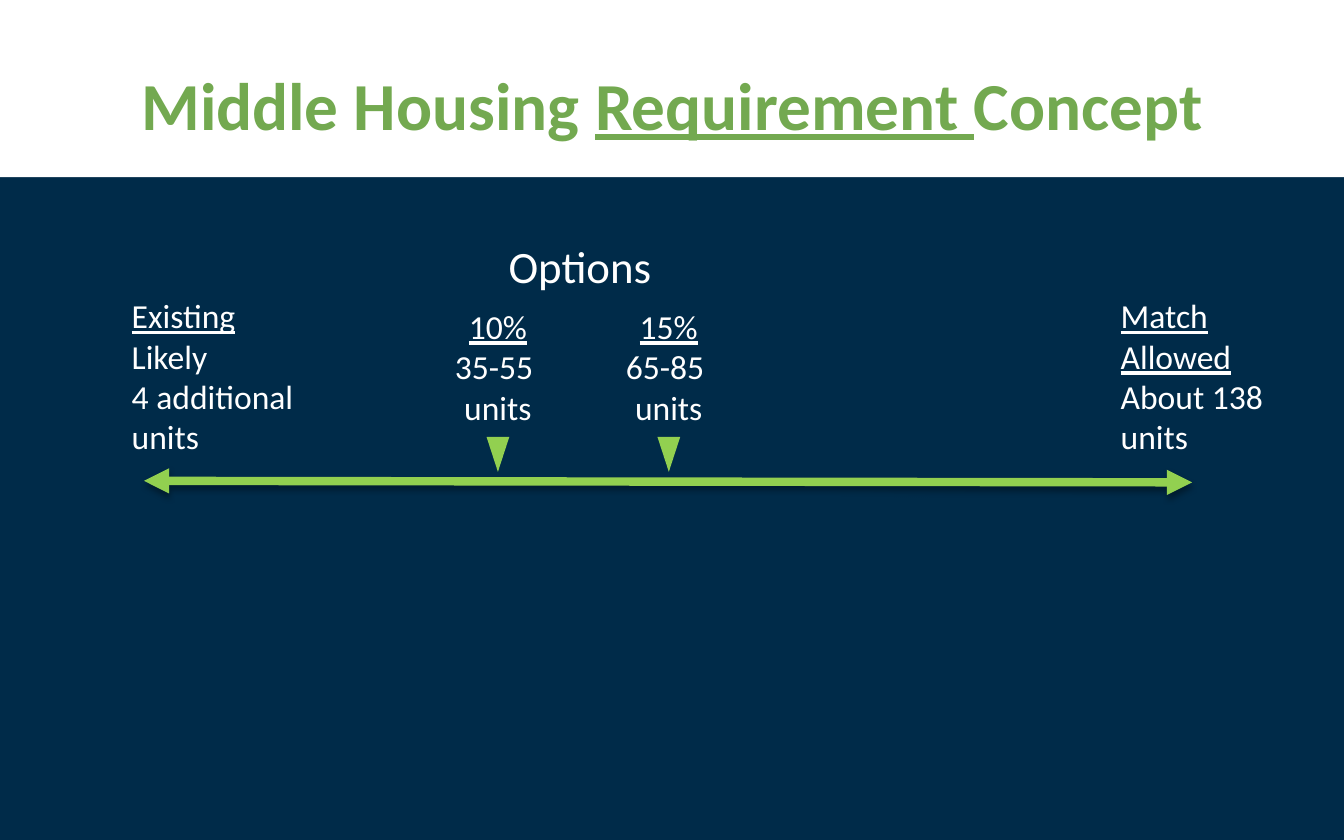
"""Build the middle housing requirement slide with its range of options."""
from lxml.etree import SubElement
from pptx import Presentation
from pptx.dml.color import RGBColor
from pptx.enum.shapes import MSO_CONNECTOR as Connector, MSO_SHAPE as Shape
from pptx.enum.text import MSO_ANCHOR as Anchor, PP_ALIGN as Align
from pptx.oxml import parse_xml
from pptx.oxml.ns import nsdecls, qn
from pptx.util import Cm, Pt

NAVY = RGBColor(0x00, 0x2B, 0x49)
WHITE = RGBColor(0xFF, 0xFF, 0xFF)
GREEN = RGBColor(0x73, 0xA9, 0x50)
LIME = RGBColor(0x92, 0xD0, 0x50)

WIDTH, HEIGHT, BAND_HEIGHT = 25.4, 15.88, 3.35
TITLE = [[("Middle Housing ", False), ("Requirement ", True), ("Concept", False)]]
ENDS = [
    (2.24, ["Existing", "Likely", "4 additional units"]),
    (20.93, ["Match Allowed", "About 138 units"]),
]
OPTIONS = [
    (9.41, ["10%", "35-55 ", "units"]),
    (12.64, ["15%", "65-85 ", "units"]),
]
ARROW = (2.72, 9.09, 22.53, 9.12)
MARKER_WIDTH, MARKER_HEIGHT, MARKER_TOP = 0.43, 0.66, 8.26
SHADOW = (
    f'<a:effectLst {nsdecls("a")}><a:outerShdw blurRad="39370" dist="22860" '
    'dir="5400000" rotWithShape="0"><a:srgbClr val="000000">'
    '<a:alpha val="35000"/></a:srgbClr></a:outerShdw></a:effectLst>'
)


def add_text(page, place, lines, size=18, color=WHITE, align=Align.LEFT, bold=False, anchor=Anchor.TOP):
    box = page.shapes.add_textbox(*map(Cm, place))
    frame = box.text_frame
    frame.word_wrap = True
    frame.vertical_anchor = anchor
    for index, line in enumerate(lines):
        para = frame.paragraphs[0] if index == 0 else frame.add_paragraph()
        para.alignment = align
        for words, underline in line:
            span = para.add_run()
            span.text = words
            span.font.color.rgb = color
            style = {"name": "Calibri", "size": Pt(size), "bold": bold, "underline": underline}
            for name, value in style.items():
                setattr(span.font, name, value)


def add_solid(page, kind, place, color):
    solid = page.shapes.add_shape(kind, *map(Cm, place))
    solid.shadow.inherit = False
    solid.fill.solid()
    solid.fill.fore_color.rgb = color
    solid.line.fill.background()
    return solid


def add_range_arrow(page):
    arrow = page.shapes.add_connector(Connector.STRAIGHT, *map(Cm, ARROW))
    arrow.line.color.rgb = LIME
    arrow.line.width = Pt(4.5)
    outline = arrow.line._get_or_add_ln()
    for end in ("a:headEnd", "a:tailEnd"):
        SubElement(outline, qn(end), type="triangle")
    arrow._element.spPr.append(parse_xml(SHADOW))


def headed(lines):
    return [[(words, index == 0)] for index, words in enumerate(lines)]


def main():
    deck = Presentation()
    deck.slide_width, deck.slide_height = Cm(WIDTH), Cm(HEIGHT)
    page = deck.slides.add_slide(deck.slide_layouts[6])
    page.background.fill.solid()
    page.background.fill.fore_color.rgb = NAVY

    add_solid(page, Shape.RECTANGLE, (0, 0, WIDTH, BAND_HEIGHT), WHITE)
    add_text(page, (1.27, 0.64, 22.86, 2.64), TITLE, 36, GREEN, Align.CENTER, True, Anchor.MIDDLE)
    add_range_arrow(page)
    for center, lines in OPTIONS:
        place = (center - MARKER_WIDTH / 2, MARKER_TOP, MARKER_WIDTH, MARKER_HEIGHT)
        add_solid(page, Shape.ISOSCELES_TRIANGLE, place, LIME).rotation = 180
        add_text(page, (center - 1.17, 5.66, 2.34, 2.57), headed(lines), align=Align.CENTER)
    for left, lines in ENDS:
        add_text(page, (left, 5.46, 4.29, 3.33), headed(lines))
    add_text(page, (9.07, 4.39, 3.78, 1.27), [[("Options", False)]], 24, align=Align.CENTER)
    deck.save("out.pptx")


if __name__ == "__main__":
    main()
